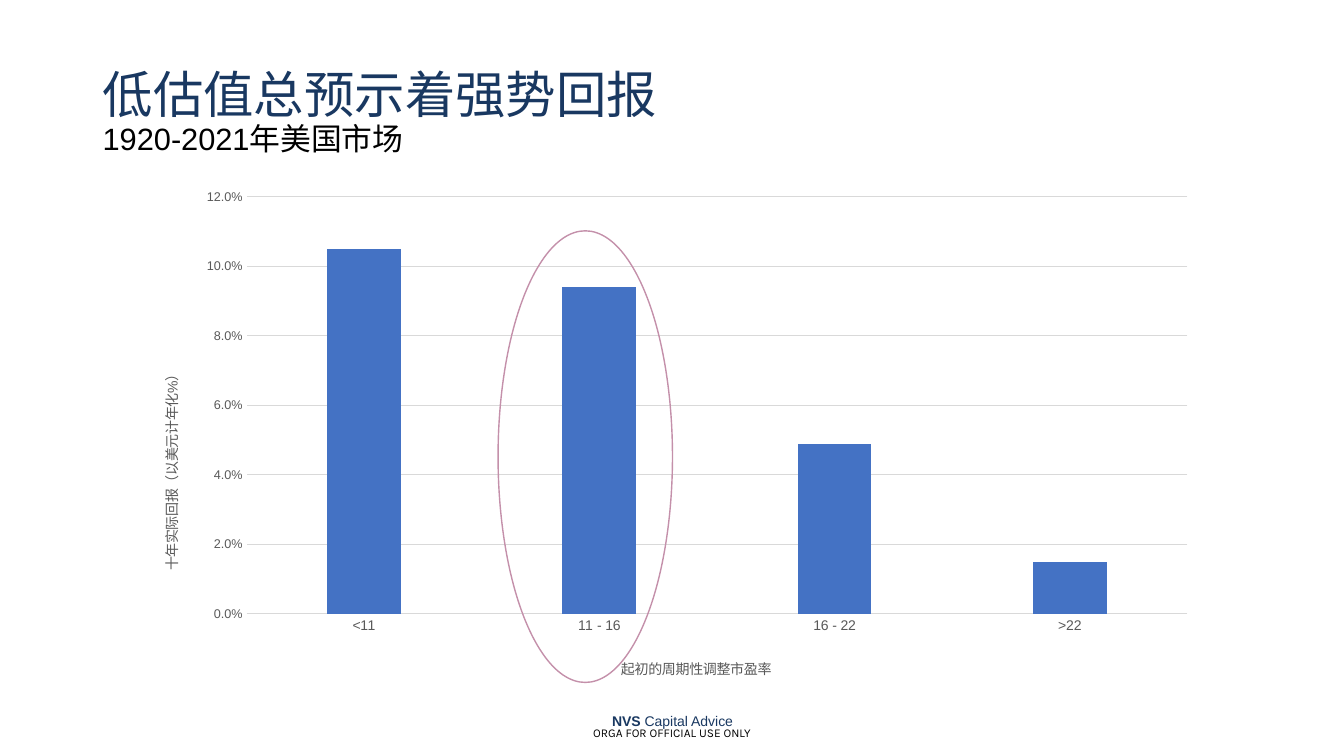
from lxml import etree
from pptx import Presentation
from pptx import util as u
from pptx.chart.data import CategoryChartData
from pptx.dml.color import RGBColor
from pptx.enum import chart as charts, shapes, text
from pptx.oxml import ns

PX = 9144


def color(value):
    return RGBColor.from_string(value)


class SlideBuilder:
    """Holds the style and current slide, with lengths in px at 100 px per inch."""

    font = "Arial"
    navy, black, gray, grid = "193861", "000000", "595959", "D9D9D9"
    blue, rose = "4472C4", "C490AA"

    def __init__(self, presentation):
        self.slide = presentation.slides.add_slide(presentation.slide_layouts[6])

    def box(self, *lengths):
        return [u.Emu(length * PX) for length in lengths]

    def style(self, font, size, hue, name=None, bold=False):
        font.name, font.size, font.bold = name or self.font, u.Pt(size), bold
        font.color.rgb = color(hue)

    def text(self, bounds, align, anchor=text.MSO_ANCHOR.MIDDLE):
        frame = self.slide.shapes.add_textbox(*self.box(*bounds)).text_frame
        frame.word_wrap = True
        frame.vertical_anchor = anchor
        paragraph = frame.paragraphs[0]
        paragraph.alignment = align
        return paragraph

    def run(self, paragraph, words, size, hue, name=None, bold=False):
        run = paragraph.add_run()
        run.text = words
        self.style(run.font, size, hue, name, bold)

    def place(self, element, **fractions):
        layout = element.find(ns.qn("c:layout"))
        if layout is None:
            layout = etree.Element(ns.qn("c:layout"))
            element.insert(0 if element.find(ns.qn("c:tx")) is None else 1, layout)
        for child in list(layout):
            layout.remove(child)
        manual = etree.SubElement(layout, ns.qn("c:manualLayout"))
        settings = {"xMode": "edge", "yMode": "edge", **fractions}
        if "w" in fractions:
            settings = {"layoutTarget": "inner", **settings}
        for tag, value in settings.items():
            etree.SubElement(manual, ns.qn(f"c:{tag}")).set("val", str(value))

    def axis(self, axis, title, size, **position):
        axis.major_tick_mark = axis.minor_tick_mark = charts.XL_TICK_MARK.NONE
        self.style(axis.tick_labels.font, size, self.gray)
        paragraph = axis.axis_title.text_frame.paragraphs[0]
        self.run(paragraph, title, 10, self.gray)
        self.place(axis.axis_title._element, **position)

    def line(self, line, hue, width):
        line.color.rgb = color(hue)
        line.width = u.Pt(width)

    def column_chart(self, bounds, returns, category_title, value_title):
        data = CategoryChartData(number_format="0.0%")
        data.categories = list(returns)
        data.add_series("Series 1", list(returns.values()))
        chart = self.slide.shapes.add_chart(
            charts.XL_CHART_TYPE.COLUMN_CLUSTERED, *self.box(*bounds), data
        ).chart
        chart.has_legend = chart.has_title = False
        self.style(chart.font, 10, self.black)
        plot = chart.plots[0]
        plot.gap_width, plot.overlap, plot.vary_by_categories = 219, -27, False
        fill = plot.series[0].format.fill
        fill.solid()
        fill.fore_color.rgb = color(self.blue)

        self.axis(chart.category_axis, category_title, 10, x=0.45, y=0.92)
        self.line(chart.category_axis.format.line, self.grid, 0.75)
        values = chart.value_axis
        self.axis(values, value_title, 9, x=0.02, y=0.36)
        values.minimum_scale, values.maximum_scale, values.major_unit = 0, 0.12, 0.02
        values.tick_labels.number_format = "0.0%"
        values.tick_labels.number_format_is_linked = False
        values.format.line.fill.background()
        self.line(values.major_gridlines.format.line, self.grid, 0.75)
        plot_area = chart._chartSpace.find(".//" + ns.qn("c:plotArea"))
        self.place(plot_area, x=0.103, y=0.034, w=0.878, h=0.808)

    def ellipse(self, bounds):
        shape = self.slide.shapes.add_shape(shapes.MSO_SHAPE.OVAL, *self.box(*bounds))
        shape.shadow.inherit = False
        shape.fill.background()
        self.line(shape.line, self.rose, 1)


def main():
    presentation = Presentation()
    presentation.slide_width, presentation.slide_height = u.Emu(1333 * PX), u.Emu(750 * PX)
    builder = SlideBuilder(presentation)
    center = text.PP_ALIGN.CENTER

    notice = builder.text((0, 715, 1333, 24), center, text.MSO_ANCHOR.TOP)
    builder.run(notice, "ORGA FOR OFFICIAL USE ONLY", 8.5, builder.black, "Karla")

    title = builder.text((92, 40, 1150, 145), text.PP_ALIGN.LEFT)
    title.line_spacing = 0.9
    builder.run(title, "低估值总预示着强势回报", 36, builder.navy)
    title.add_line_break()
    builder.run(title, "1920-2021年美国市场", 22, builder.black)

    firm = builder.text((442, 695, 450, 40), center)
    builder.run(firm, "NVS", 10, builder.navy, bold=True)
    builder.run(firm, " Capital Advice", 10, builder.navy)

    returns = {"<11": 0.105, "11 - 16": 0.094, "16 - 22": 0.049, ">22": 0.015}
    builder.column_chart(
        (135, 178, 1063, 512), returns,
        "起初的周期性调整市盈率", "十年实际回报（以美元计年化%）",
    )
    builder.ellipse((494, 229, 173, 448))
    presentation.save("out.pptx")


if __name__ == "__main__":
    main()
